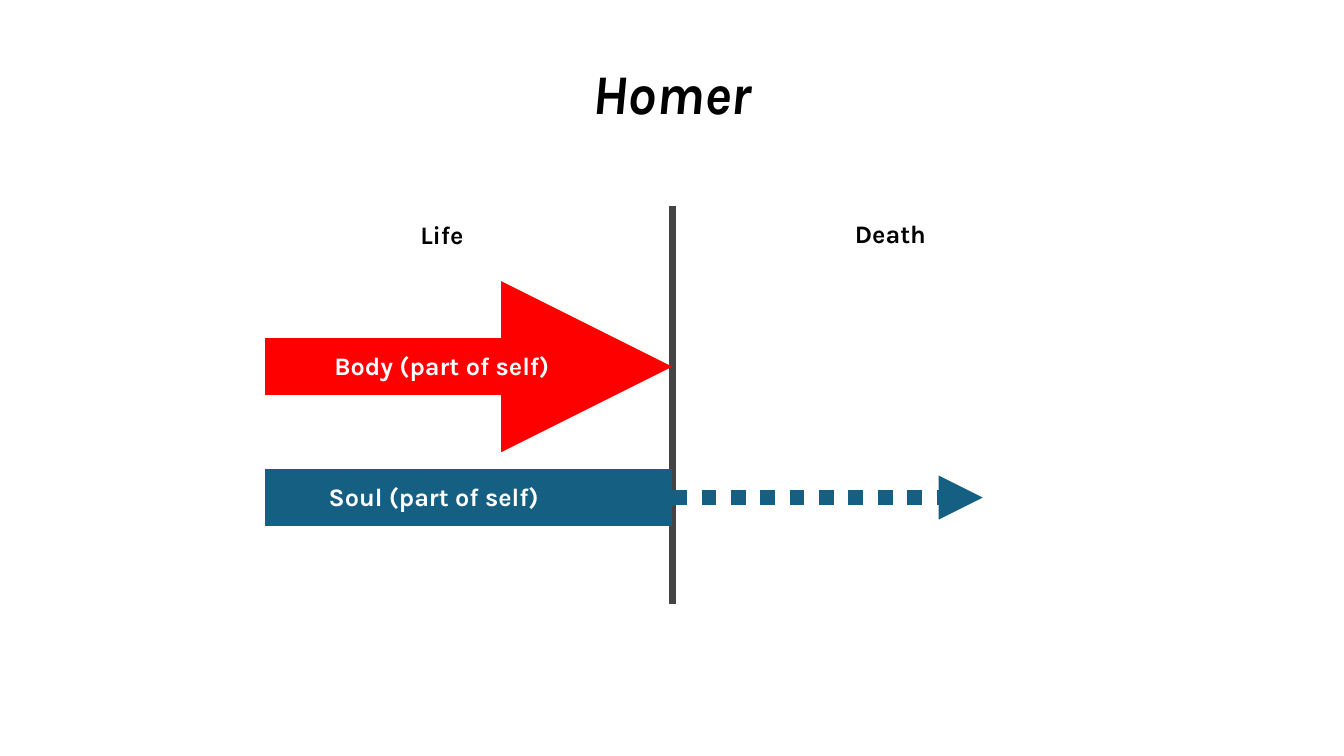
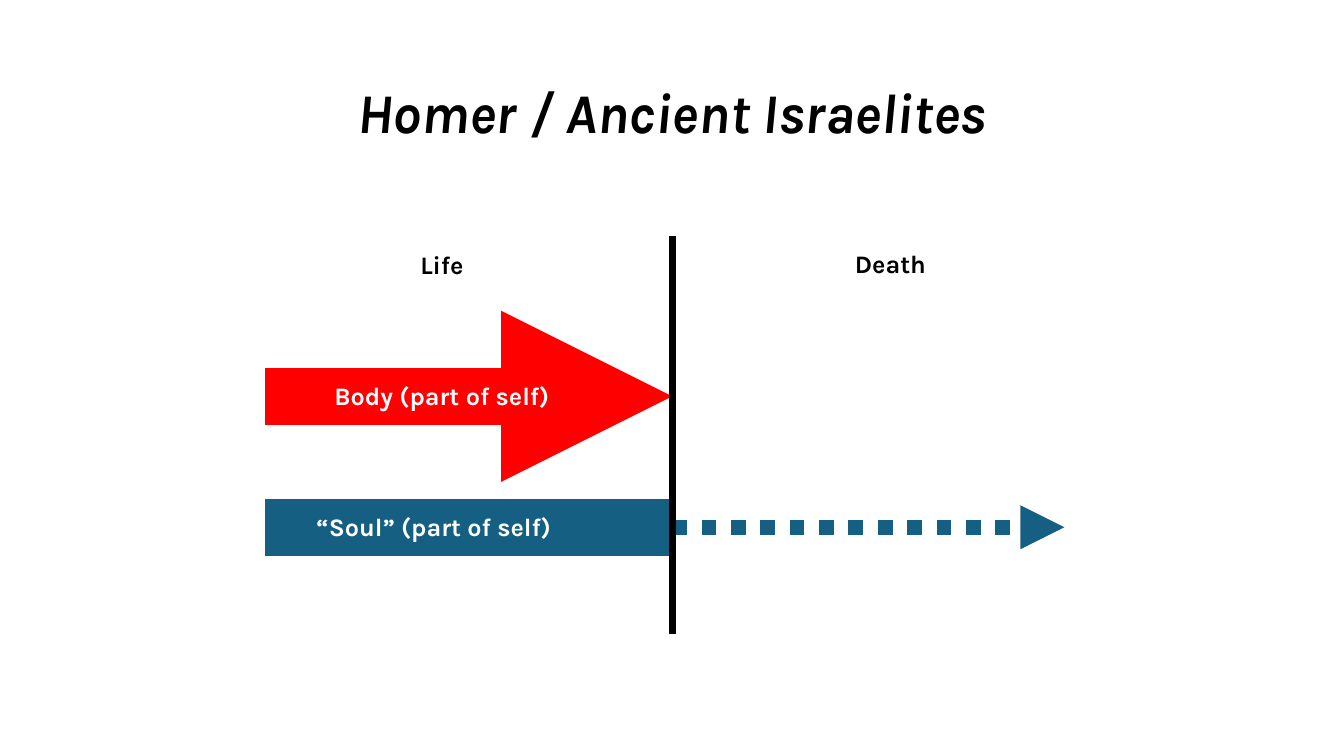
from pptx import Presentation
from pptx.dml.color import RGBColor
from pptx.enum.dml import MSO_LINE
from pptx.enum.shapes import MSO_CONNECTOR as Link
from pptx.enum.text import MSO_ANCHOR as Anchor, MSO_AUTO_SIZE as Fit, PP_ALIGN as Align
from pptx.oxml.ns import qn
from pptx.util import Pt
from lxml.etree import SubElement

# Shared look
FONT = "Karla"
BLACK, WHITE, GREY = "000000", "FFFFFF", "444444"
RED, BLUE = "FF0000", "156082"

# Shared places, in points
LEFT, MID = 189.4, 480.2
TITLE_W, LABEL_W = 556.8, 228.2
LIFE_X, SOUL_X, DEATH_X = 201.6, 195.8, 522
WALL_H, BODY_Y, SOUL_Y = 284.4, 114.5, 208
BAR, WALL, DOTS = 40.75, 5.25, 10.5


def color(code):
    return RGBColor.from_string(code)


def style(para, text, size, code, italic=False):
    para.text = text
    para.alignment = Align.CENTER
    font = para.font
    font.name, font.size = FONT, Pt(size)
    font.bold, font.italic = True, italic
    font.color.rgb = color(code)


def title(slide, text, top):
    box = slide.shapes.title
    box.left, box.top = Pt(480 - TITLE_W / 2), Pt(top)
    box.width, box.height = Pt(TITLE_W), Pt(55.4)
    frame = box.text_frame
    frame.auto_size = Fit.NONE
    frame.vertical_anchor = Anchor.TOP
    style(frame.paragraphs[0], text, 40, BLACK, italic=True)


def label(slide, text, x, y, code=BLACK):
    box = slide.shapes.add_textbox(Pt(x), Pt(y), Pt(LABEL_W), Pt(29))
    box.text_frame.word_wrap = True
    style(box.text_frame.paragraphs[0], text, 18, code)


def line(slide, start, end, code, width, arrow=False, dots=False):
    link = slide.shapes.add_connector(
        Link.STRAIGHT, *(Pt(n) for n in (*start, *end)))
    link.line.color.rgb = color(code)
    link.line.width = Pt(width)
    if dots:
        link.line.dash_style = MSO_LINE.ROUND_DOT
    props = link._element.spPr
    if arrow:
        SubElement(props.find(qn("a:ln")), qn("a:tailEnd"), type="triangle")
    SubElement(props, qn("a:effectLst"))


def wall(slide, top, code):
    line(slide, (MID, top), (MID, top + WALL_H), code, WALL)


def fates(slide, top, soul, end):
    """Draw what becomes of body and soul, below the two headings."""
    body_y, soul_y = top + BODY_Y, top + SOUL_Y
    label(slide, "Life", LIFE_X, top + 5.9)
    label(slide, "Death", DEATH_X, top + 5)
    line(slide, (LEFT, body_y), (MID, body_y), RED, BAR, arrow=True)
    label(slide, "Body (part of self)", LIFE_X, body_y - 15, WHITE)
    line(slide, (LEFT, soul_y), (MID, soul_y), BLUE, BAR)
    label(slide, soul, SOUL_X, soul_y - 15, WHITE)
    line(slide, (MID, soul_y), (end, soul_y), BLUE, DOTS, arrow=True, dots=True)


def main():
    deck = Presentation()
    deck.slide_width, deck.slide_height = Pt(960), Pt(540)
    plain = deck.slide_layouts[5]

    # Homer: the wall stands behind the bars
    slide = deck.slides.add_slide(plain)
    title(slide, "Homer", 38.2)
    wall(slide, 147.4, GREY)
    fates(slide, 147.4, "Soul (part of self)", 702)

    # Homer and the Israelites: the wall stands in front
    slide = deck.slides.add_slide(plain)
    title(slide, "Homer / Ancient Israelites", 51.8)
    fates(slide, 168.6, "“Soul” (part of self)", 760.3)
    wall(slide, 168.6, BLACK)

    deck.save("out.pptx")


if __name__ == "__main__":
    main()
